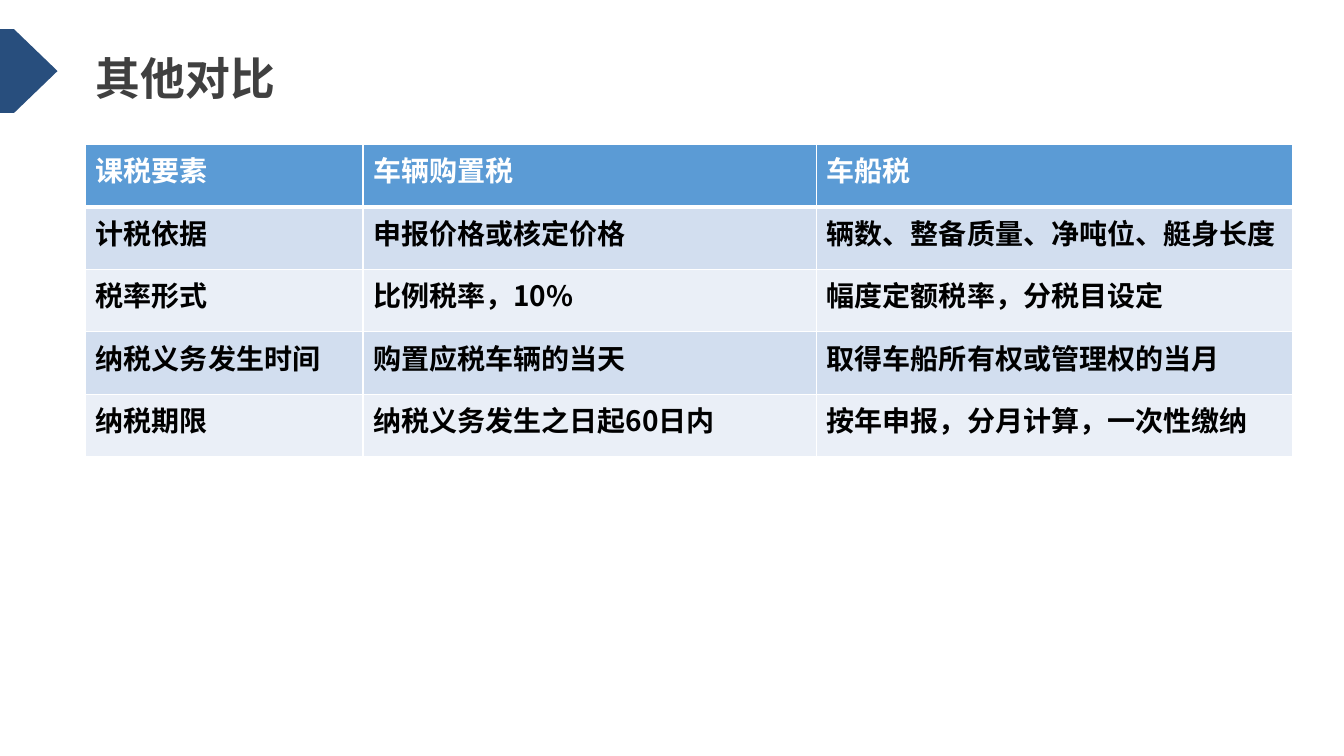
from dataclasses import dataclass

from pptx import Presentation
from pptx import util as u
from pptx.dml.color import RGBColor
from pptx.enum import text
from pptx.oxml import ns, xmlchemy

WIDTH, HEIGHT = u.Inches(13.33), u.Inches(7.5)


@dataclass(frozen=True)
class Theme:
    font: str = "Noto Sans CJK SC"
    title_size: int = 32
    table_size: int = 20
    background: str = "FFFFFF"
    title: str = "404040"
    tag: str = "284E7D"
    header_fill: str = "5B9BD5"
    header_text: str = "FFFFFF"
    body_text: str = "000000"
    bands: tuple = ("D2DEEF", "EAEFF7")
    border: str = "FFFFFF"
    border_width: int = 1
    header_rule: int = 3


THEME = Theme()

TITLE = "其他对比"
ROWS = (
    ("课税要素", "车辆购置税", "车船税"),
    ("计税依据", "申报价格或核定价格", "辆数、整备质量、净吨位、艇身长度"),
    ("税率形式", "比例税率，10%", "幅度定额税率，分税目设定"),
    ("纳税义务发生时间", "购置应税车辆的当天", "取得车船所有权或管理权的当月"),
    ("纳税期限", "纳税义务发生之日起60日内", "按年申报，分月计算，一次性缴纳"),
)

# Layout in percent of the slide's width or height
LEFT = 6.38
TITLE_TOP, TITLE_WIDTH, TITLE_HEIGHT = 6, 14.93, 8.53
TABLE_TOP, ROW_HEIGHT = 19.07, 8.27
COLUMN_WIDTHS = (20.63, 33.76, 35.41)
TAG_SHOULDER, TAG_TIP = 1.05, 4.28
TAG_TOP, TAG_BOTTOM = 3.87, 14.93


def across(percent):
    return u.Emu(round(WIDTH * percent / 100))


def down(percent):
    return u.Emu(round(HEIGHT * percent / 100))


def paint(fill, color):
    fill.solid()
    fill.fore_color.rgb = RGBColor.from_string(color)


def add_run(paragraph, words, size, color):
    run = paragraph.add_run()
    run.text = words
    run.font.size = u.Pt(size)
    run.font.bold = True
    run.font.name = THEME.font
    run.font.color.rgb = RGBColor.from_string(color)
    # Chinese characters take the East Asian typeface
    east_asian = xmlchemy.OxmlElement("a:ea")
    east_asian.set("typeface", THEME.font)
    run.font._element.find(ns.qn("a:latin")).addnext(east_asian)


def add_title(slide):
    box = slide.shapes.add_textbox(across(LEFT), down(TITLE_TOP),
                                   across(TITLE_WIDTH), down(TITLE_HEIGHT))
    box.text_frame.word_wrap = False
    box.text_frame.auto_size = text.MSO_AUTO_SIZE.SHAPE_TO_FIT_TEXT
    add_run(box.text_frame.paragraphs[0], TITLE, THEME.title_size, THEME.title)


def add_tag(slide):
    middle = (TAG_TOP + TAG_BOTTOM) / 2
    outline = ((TAG_SHOULDER, TAG_TOP), (TAG_TIP, middle),
               (TAG_SHOULDER, TAG_BOTTOM), (0, TAG_BOTTOM))
    builder = slide.shapes.build_freeform(0, down(TAG_TOP))
    builder.add_line_segments([(across(x), down(y)) for x, y in outline])
    tag = builder.convert_to_shape()
    tag.shadow.inherit = False
    paint(tag.fill, THEME.tag)
    tag.line.fill.background()


def add_border(cell, side, width):
    line = xmlchemy.OxmlElement(f"a:ln{side}")
    line.set("w", str(u.Pt(width)))
    fill = xmlchemy.OxmlElement("a:solidFill")
    color = xmlchemy.OxmlElement("a:srgbClr")
    color.set("val", THEME.border)
    fill.append(color)
    line.append(fill)
    cell._tc.get_or_add_tcPr().append(line)


def style_cell(cell, words, row):
    is_header = row == 0
    # The thick rule is shared by the header and the first body row
    widths = {"L": THEME.border_width, "R": THEME.border_width,
              "T": THEME.header_rule if row == 1 else THEME.border_width,
              "B": THEME.header_rule if is_header else THEME.border_width}
    for side, width in widths.items():
        add_border(cell, side, width)
    paint(cell.fill, THEME.header_fill if is_header else THEME.bands[(row - 1) % 2])
    add_run(cell.text_frame.paragraphs[0], words, THEME.table_size,
            THEME.header_text if is_header else THEME.body_text)


def add_comparison(slide):
    frame = slide.shapes.add_table(
        len(ROWS), len(COLUMN_WIDTHS), across(LEFT), down(TABLE_TOP),
        across(sum(COLUMN_WIDTHS)), down(ROW_HEIGHT * len(ROWS)))
    table = frame.table
    for column, width in zip(table.columns, COLUMN_WIDTHS):
        column.width = across(width)
    for row, entries in enumerate(ROWS):
        table.rows[row].height = down(ROW_HEIGHT)
        for column, words in enumerate(entries):
            style_cell(table.cell(row, column), words, row)


def main():
    presentation = Presentation()
    presentation.slide_width, presentation.slide_height = WIDTH, HEIGHT
    slide = presentation.slides.add_slide(presentation.slide_layouts[6])
    paint(slide.background.fill, THEME.background)

    # Heading with its side tag
    add_title(slide)
    add_tag(slide)

    # Tax comparison table
    add_comparison(slide)

    presentation.save("out.pptx")


if __name__ == "__main__":
    main()
